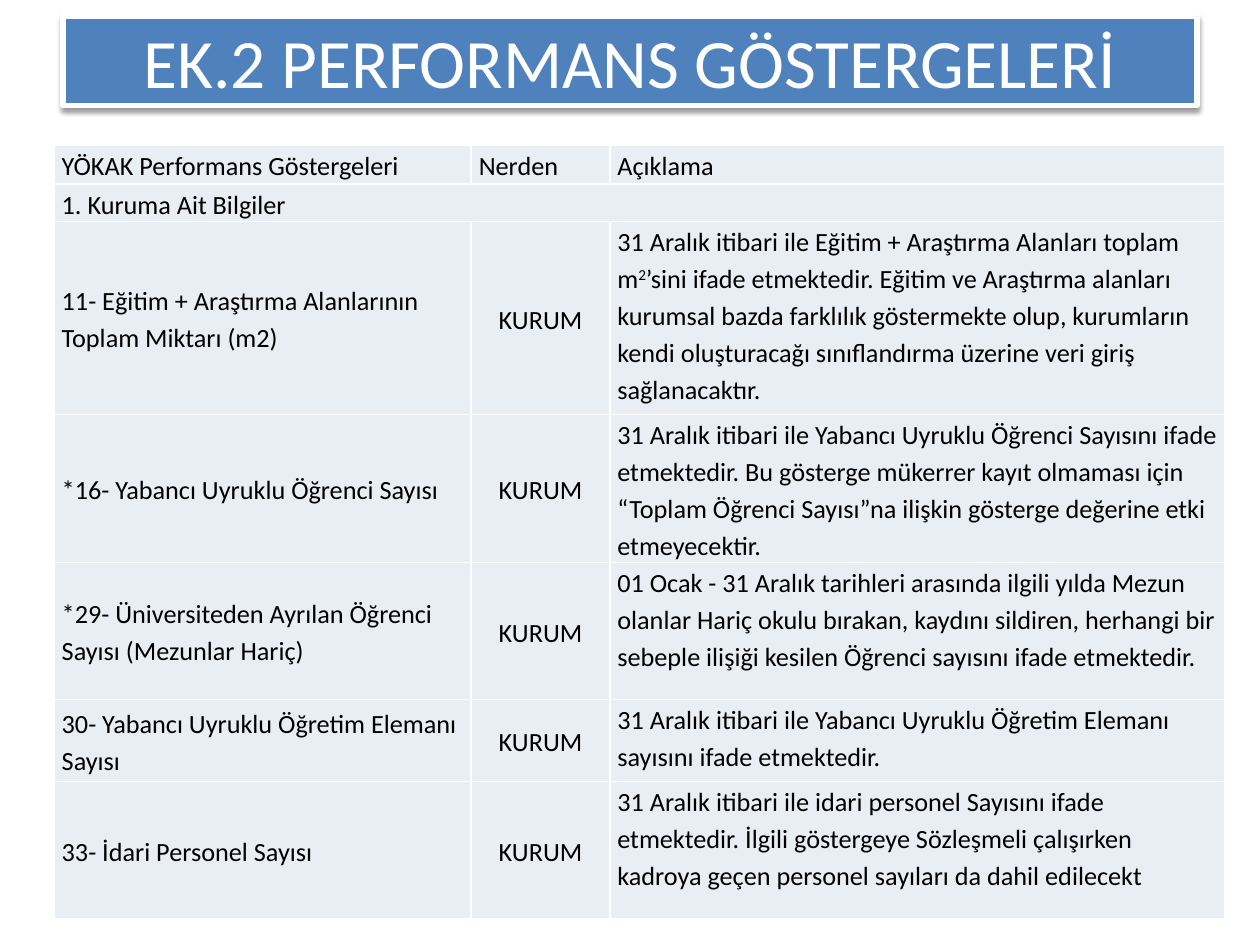
from dataclasses import dataclass

from lxml.etree import SubElement
from pptx import Presentation
from pptx.dml.color import RGBColor
from pptx.enum.shapes import MSO_SHAPE
from pptx.enum.text import MSO_ANCHOR, PP_ALIGN
from pptx.oxml import parse_xml
from pptx.oxml.ns import nsdecls, qn
from pptx.slide import Slide
from pptx.table import Table, _Cell
from pptx.util import Inches, Pt

COLORS = {"title": "4F81BD", "cell": "E9EDF4", "white": "FFFFFF", "black": "000000"}
FONT = "Calibri"
SOURCE = "KURUM"
HEADINGS = ["YÖKAK Performans Göstergeleri", "Nerden", "Açıklama"]
SECTION = "1. Kuruma Ait Bilgiler"
COLUMN_WIDTHS = [3.31, 1.1, 4.88]
HEADING_HEIGHTS = [0.31, 0.3]
CELL_FORMAT = {
    "margin_left": Inches(0.06),
    "margin_right": Inches(0.06),
    "margin_top": Inches(0),
    "margin_bottom": Inches(0),
}


@dataclass
class Indicator:
    name: str
    height: float
    description: list[str]


INDICATORS = [
    Indicator("11- Eğitim + Araştırma Alanlarının Toplam Miktarı (m2)", 1.53, [
        "31 Aralık itibari ile Eğitim + Araştırma Alanları toplam m",
        "2",
        "’sini ifade etmektedir. Eğitim ve Araştırma alanları kurumsal bazda "
        "farklılık göstermekte olup, kurumların kendi oluşturacağı "
        "sınıflandırma üzerine veri giriş sağlanacaktır.",
    ]),
    Indicator("*16- Yabancı Uyruklu Öğrenci Sayısı", 1.09, [
        "31 Aralık itibari ile Yabancı Uyruklu Öğrenci Sayısını ifade "
        "etmektedir. Bu gösterge mükerrer kayıt olmaması için “Toplam Öğrenci "
        "Sayısı”na ilişkin gösterge değerine etki etmeyecektir.",
    ]),
    Indicator("*29- Üniversiteden Ayrılan Öğrenci Sayısı (Mezunlar Hariç)", 1.09, [
        "01 Ocak - 31 Aralık tarihleri arasında ilgili yılda Mezun olanlar "
        "Hariç okulu bırakan, kaydını sildiren, herhangi bir sebeple ilişiği "
        "kesilen Öğrenci sayısını ifade etmektedir.",
    ]),
    Indicator("30- Yabancı Uyruklu Öğretim Elemanı Sayısı", 0.65, [
        "31 Aralık itibari ile Yabancı Uyruklu Öğretim Elemanı sayısını ifade "
        "etmektedir.",
    ]),
    Indicator("33- İdari Personel Sayısı", 1.09, [
        "31 Aralık itibari ile idari personel Sayısını ifade etmektedir. İlgili "
        "göstergeye Sözleşmeli çalışırken kadroya geçen personel sayıları da "
        "dahil edilecekt",
    ]),
]


def color(name: str) -> RGBColor:
    return RGBColor.from_string(COLORS[name])


def apply(target: object, values: dict) -> None:
    for name, value in values.items():
        setattr(target, name, value)


def add_span(para, text: str, size: float, color_name: str):
    span = para.add_run()
    span.text = text
    apply(span.font, {"name": FONT, "size": Pt(size)})
    span.font.color.rgb = color(color_name)
    return span


def add_shadow(box) -> None:
    box.shadow.inherit = False
    effects = box._element.spPr.find(qn("a:effectLst"))
    effects.append(parse_xml(
        f'<a:outerShdw {nsdecls("a")} blurRad="{Pt(3.1)}" dist="{Pt(1.6)}" '
        f'dir="5400000" rotWithShape="0"><a:srgbClr val="{COLORS["black"]}">'
        '<a:alpha val="38000"/></a:srgbClr></a:outerShdw>'
    ))


def add_title(page: Slide, text: str) -> None:
    box = page.shapes.add_shape(
        MSO_SHAPE.RECTANGLE, Inches(0.5), Inches(0.13), Inches(9), Inches(0.71)
    )
    box.fill.solid()
    box.fill.fore_color.rgb = color("title")
    box.line.color.rgb = color("white")
    box.line.width = Pt(3)
    add_shadow(box)
    apply(box.text_frame, {"word_wrap": True, "vertical_anchor": MSO_ANCHOR.MIDDLE})
    para = box.text_frame.paragraphs[0]
    para.alignment = PP_ALIGN.CENTER
    add_span(para, text, 39.6, "white")


def set_borders(cell: _Cell) -> None:
    properties = cell._tc.get_or_add_tcPr()
    for position, side in enumerate(["lnL", "lnR", "lnT", "lnB"]):
        border = parse_xml(f'<a:{side} {nsdecls("a")} w="{Pt(1)}"/>')
        fill = SubElement(border, qn("a:solidFill"))
        SubElement(fill, qn("a:srgbClr"), val=COLORS["white"])
        properties.insert(position, border)


def write_cell(
    cell: _Cell,
    texts: list[str],
    alignment: PP_ALIGN = PP_ALIGN.LEFT,
    anchor: MSO_ANCHOR = MSO_ANCHOR.MIDDLE,
) -> None:
    apply(cell, {**CELL_FORMAT, "vertical_anchor": anchor})
    para = cell.text_frame.paragraphs[0]
    apply(para, {"alignment": alignment, "line_spacing": 1.15})
    for text in texts:
        span = add_span(para, text, 15, "black")
        if text == "2":
            span.font._element.set("baseline", "30000")


def add_indicator_table(page: Slide) -> Table:
    heights = HEADING_HEIGHTS + [indicator.height for indicator in INDICATORS]
    table = page.shapes.add_table(
        len(heights), len(COLUMN_WIDTHS), Inches(0.43), Inches(1.15),
        Inches(sum(COLUMN_WIDTHS)), Inches(sum(heights)),
    ).table
    apply(table, {"first_row": False, "horz_banding": False})
    for column, width in zip(table.columns, COLUMN_WIDTHS):
        column.width = Inches(width)
    for row, height in zip(table.rows, heights):
        row.height = Inches(height)
    for cell in table.iter_cells():
        cell.fill.solid()
        cell.fill.fore_color.rgb = color("cell")
        set_borders(cell)
    for index, heading in enumerate(HEADINGS):
        write_cell(table.cell(0, index), [heading])
    table.cell(1, 0).merge(table.cell(1, 2))
    write_cell(table.cell(1, 0), [SECTION])
    for index, indicator in enumerate(INDICATORS, start=len(HEADING_HEIGHTS)):
        write_cell(table.cell(index, 0), [indicator.name])
        write_cell(table.cell(index, 1), [SOURCE], alignment=PP_ALIGN.CENTER)
        write_cell(table.cell(index, 2), indicator.description, anchor=MSO_ANCHOR.TOP)
    return table


def main() -> None:
    deck = Presentation()
    apply(deck, {"slide_width": Inches(10), "slide_height": Inches(7.5)})
    page = deck.slides.add_slide(deck.slide_layouts[6])
    add_title(page, "EK.2 PERFORMANS GÖSTERGELERİ")
    add_indicator_table(page)
    deck.save("out.pptx")


if __name__ == "__main__":
    main()
